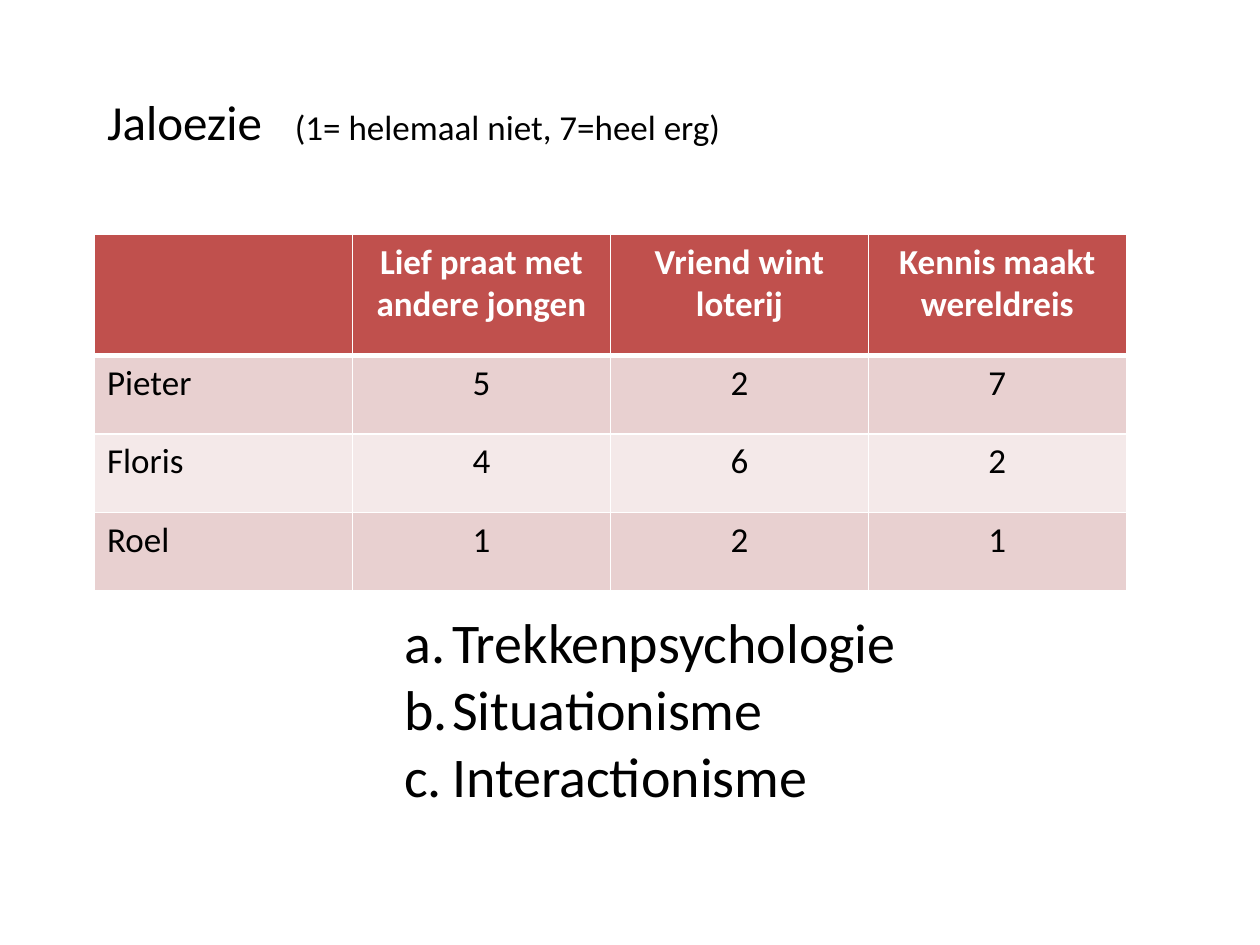
from lxml import etree
from pptx import Presentation, util as u
from pptx.dml.color import RGBColor
from pptx.enum import text
from pptx.oxml.ns import qn

BLACK = RGBColor(0x00, 0x00, 0x00)
WHITE = RGBColor(0xFF, 0xFF, 0xFF)
RED = RGBColor(0xC0, 0x50, 0x4D)
PINK = RGBColor(0xE8, 0xD0, 0xD0)
PALE_PINK = RGBColor(0xF4, 0xE9, 0xE9)

SCORES = [
    ("", "Lief praat met andere jongen", "Vriend wint loterij", "Kennis maakt wereldreis"),
    ("Pieter", "5", "2", "7"),
    ("Floris", "4", "6", "2"),
    ("Roel", "1", "2", "1"),
]
ANSWERS = ["Trekkenpsychologie", "Situationisme", "Interactionisme"]


class SlideBuilder:
    """Places elements by shares of the slide's width and height."""

    font = "Calibri"
    body_size, title_size, answer_size = 20, 28, 32

    def __init__(self, width, height):
        self.deck = Presentation()
        self.deck.slide_width, self.deck.slide_height = u.Inches(width), u.Inches(height)
        self.slide = self.deck.slides.add_slide(self.deck.slide_layouts[5])

    def box(self, left, top, width, height):
        across, down = self.deck.slide_width, self.deck.slide_height
        return [round(v) for v in (left * across, top * down, width * across, height * down)]

    def style(self, paragraph, size, color=BLACK, bold=False, align=text.PP_ALIGN.LEFT):
        paragraph.alignment = align
        font = paragraph.font
        font.name, font.size, font.bold = self.font, u.Pt(size), bold
        font.color.rgb = color

    def title(self, topic, scale, gap, area):
        """Write the topic and, after a tab stop at gap inches, its smaller scale."""
        title = self.slide.shapes.title
        title.left, title.top, title.width, title.height = self.box(*area)
        frame = title.text_frame
        frame.auto_size = text.MSO_AUTO_SIZE.NONE
        frame.vertical_anchor = text.MSO_ANCHOR.TOP
        heading = frame.paragraphs[0]
        self.style(heading, self.title_size)
        stops = etree.Element(qn("a:tabLst"))
        etree.SubElement(stops, qn("a:tab"), pos=str(u.Inches(gap)), algn="l")
        properties = heading._p.get_or_add_pPr()
        properties.find(qn("a:defRPr")).addprevious(stops)
        for words, size in ((topic + "\t", self.title_size), (scale, self.body_size)):
            run = heading.add_run()
            run.text, run.font.size = words, u.Pt(size)

    def table(self, rows, row_shares, area):
        """Draw rows in equal columns, with row heights as shares of the table."""
        left, top, width, height = self.box(*area)
        table = self.slide.shapes.add_table(
            len(rows), len(rows[0]), left, top, width, height).table
        for column in table.columns:
            column.width = width // len(rows[0])
        for r, (words, share) in enumerate(zip(rows, row_shares)):
            table.rows[r].height = round(height * share)
            header = r == 0
            for c, word in enumerate(words):
                cell = table.cell(r, c)
                cell.text = word
                self.style(cell.text_frame.paragraphs[0], self.body_size,
                           WHITE if header else BLACK, header,
                           text.PP_ALIGN.CENTER if c else text.PP_ALIGN.LEFT)
                self.borders(cell, top=3 if r == 1 else 1, bottom=3 if header else 1)
                cell.fill.solid()
                cell.fill.fore_color.rgb = RED if header else PINK if r % 2 else PALE_PINK

    def borders(self, cell, top, bottom):
        properties = cell._tc.get_or_add_tcPr()
        for side, points in (("L", 1), ("R", 1), ("T", top), ("B", bottom)):
            line = etree.SubElement(properties, qn(f"a:ln{side}"), w=str(u.Pt(points)))
            fill = etree.SubElement(line, qn("a:solidFill"))
            etree.SubElement(fill, qn("a:srgbClr"), val=str(WHITE))

    def lettered_list(self, items, indent, area):
        frame = self.slide.shapes.add_textbox(*self.box(*area)).text_frame
        frame.word_wrap = True
        frame.auto_size = text.MSO_AUTO_SIZE.SHAPE_TO_FIT_TEXT
        for i, item in enumerate(items):
            answer = frame.add_paragraph() if i else frame.paragraphs[0]
            answer.text = item
            self.style(answer, self.answer_size)
            properties = answer._p.get_or_add_pPr()
            properties.set("marL", str(u.Inches(indent)))
            properties.set("indent", str(-u.Inches(indent)))
            letter = etree.Element(qn("a:buAutoNum"), type="alphaLcPeriod")
            properties.find(qn("a:defRPr")).addprevious(letter)


def main():
    builder = SlideBuilder(10, 7.5)
    builder.lettered_list(ANSWERS, 0.38, (0.311, 4.77 / 7.5, 0.512, 1.72 / 7.5))
    builder.table(SCORES, (0.34, 0.22, 0.22, 0.22), (0.075, 1.86 / 7.5, 0.819, 2.83 / 7.5))
    builder.title("Jaloezie", "(1= helemaal niet, 7=heel erg)", 1.49,
                  (0.075, 0.68 / 7.5, 0.646, 0.57 / 7.5))
    builder.deck.save("out.pptx")


if __name__ == "__main__":
    main()
